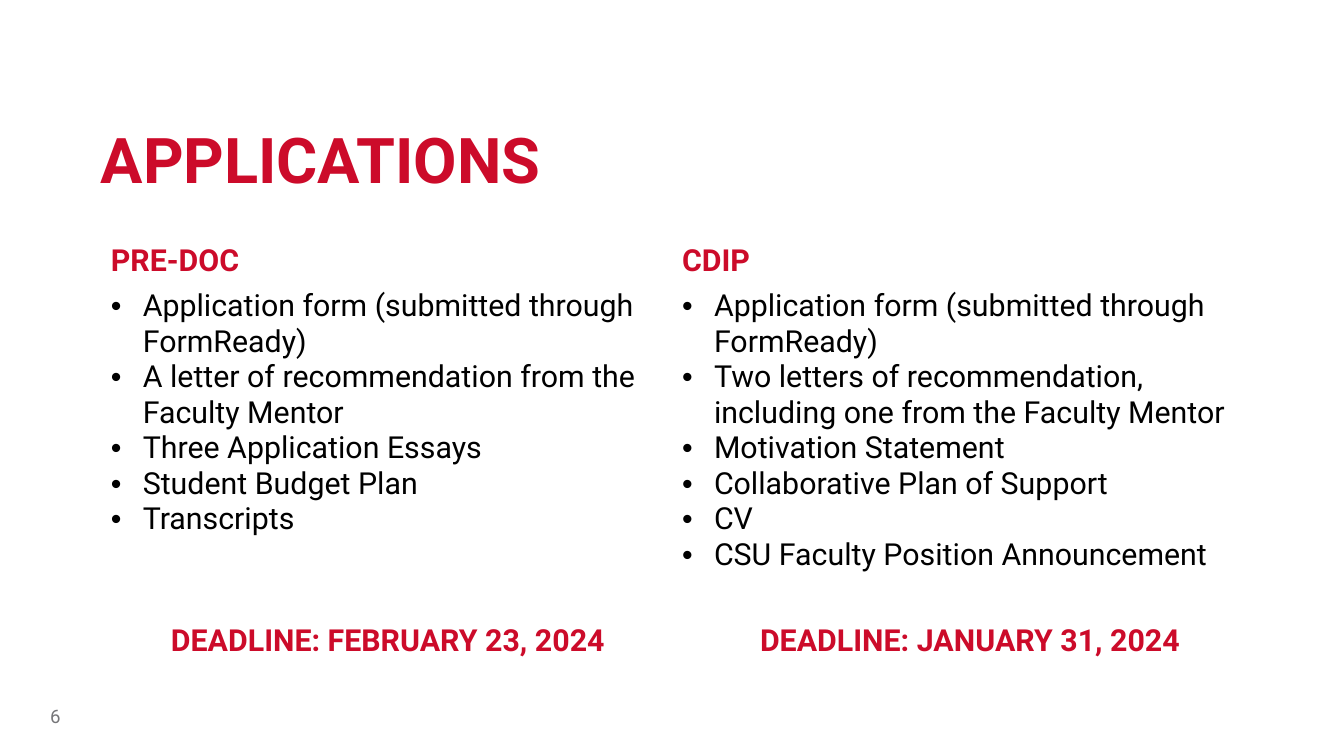
from lxml.etree import SubElement
from pptx import Presentation
from pptx.dml.color import RGBColor
from pptx.enum.text import MSO_ANCHOR as Anchor, PP_ALIGN as Align
from pptx.oxml.ns import qn
from pptx.util import Inches, Pt

RED = RGBColor(0xCC, 0x0B, 0x2A)
GRAY = RGBColor(0x76, 0x76, 0x79)
BLACK = RGBColor(0, 0, 0)

PROGRAMS = [
    (
        "PRE-DOC",
        [
            "Application form (submitted through FormReady)",
            "A letter of recommendation from the Faculty Mentor",
            "Three Application Essays",
            "Student Budget Plan",
            "Transcripts",
        ],
        "DEADLINE: FEBRUARY 23, 2024",
    ),
    (
        "CDIP",
        [
            "Application form (submitted through FormReady)",
            "Two letters of recommendation, including one from the Faculty Mentor",
            "Motivation Statement",
            "Collaborative Plan of Support",
            "CV",
            "CSU Faculty Position Announcement",
        ],
        "DEADLINE: JANUARY 31, 2024",
    ),
]


class SlideBuilder:
    font_name = "Roboto"
    table_size = 26
    bullet_indent = 0.38

    def __init__(self, slide):
        self.slide = slide

    def style(self, paragraph, size, color, bold=False):
        font = paragraph.font
        font.name = self.font_name
        font.size = Pt(size)
        font.bold = bold
        font.color.rgb = color

    def text(self, left, top, width, height, text, size, color, anchor, bold=False):
        box = self.slide.shapes.add_textbox(
            Inches(left), Inches(top), Inches(width), Inches(height)
        )
        frame = box.text_frame
        frame.word_wrap = True
        frame.vertical_anchor = anchor
        paragraph = frame.paragraphs[0]
        paragraph.text = text
        self.style(paragraph, size, color, bold)
        return paragraph

    def table(self, left, top, widths, heights):
        frame = self.slide.shapes.add_table(
            len(heights), len(widths), Inches(left), Inches(top),
            Inches(sum(widths)), Inches(sum(heights)),
        )
        table = frame.table
        table.first_row = table.horz_banding = False
        for column, width in zip(table.columns, widths):
            column.width = Inches(width)
        for row, height in zip(table.rows, heights):
            row.height = Inches(height)
        for cell in table.iter_cells():
            cell.fill.background()
        return table

    def heading(self, cell, text, align=Align.LEFT):
        paragraph = cell.text_frame.paragraphs[0]
        paragraph.text = text
        paragraph.alignment = align
        self.style(paragraph, self.table_size, RED, bold=True)

    def bullets(self, cell, items):
        frame = cell.text_frame
        frame.text = "\n".join(items)
        for paragraph in frame.paragraphs:
            properties = paragraph._p.get_or_add_pPr()
            properties.set("marL", str(Inches(self.bullet_indent)))
            properties.set("indent", str(-Inches(self.bullet_indent)))
            SubElement(properties, qn("a:buFont"), typeface="Arial")
            SubElement(properties, qn("a:buChar"), char="•")
            self.style(paragraph, self.table_size, BLACK)


def main():
    presentation = Presentation()
    presentation.slide_width = Inches(16)
    presentation.slide_height = Inches(9)
    slide = presentation.slides.add_slide(presentation.slide_layouts[6])
    builder = SlideBuilder(slide)

    title = builder.text(
        1.1, 1.41, 14.1, 0.98, "APPLICATIONS", 54, RED, Anchor.BOTTOM, bold=True
    )
    title.line_spacing = 0.9
    builder.text(0.5, 8.28, 1.6, 0.48, "6", 16, GRAY, Anchor.MIDDLE)

    table = builder.table(1.22, 2.85, [6.8, 7.06], [0.41, 2.71, 2.01])
    for column, (program, requirements, deadline) in enumerate(PROGRAMS):
        builder.heading(table.cell(0, column), program)
        builder.bullets(table.cell(1, column), requirements)
        deadline_cell = table.cell(2, column)
        deadline_cell.margin_top = Inches(0.47)
        builder.heading(deadline_cell, deadline, Align.CENTER)

    presentation.save("out.pptx")


if __name__ == "__main__":
    main()
